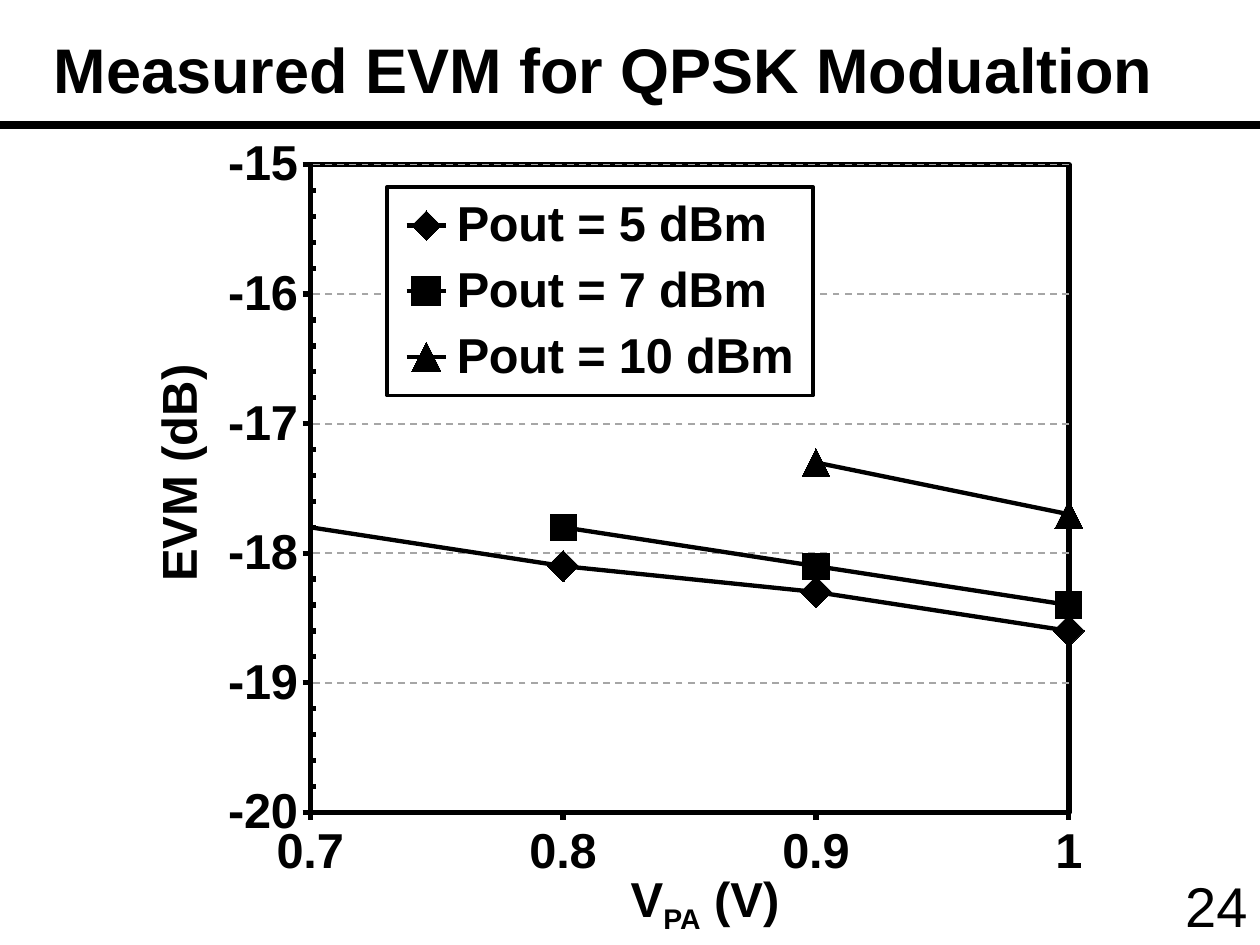
from lxml import etree
from pptx import Presentation
from pptx.chart.data import XyChartData
from pptx.dml.color import RGBColor
from pptx.enum.chart import XL_CHART_TYPE, XL_LEGEND_POSITION, XL_MARKER_STYLE, XL_TICK_MARK
from pptx.enum.dml import MSO_LINE
from pptx.enum.shapes import MSO_CONNECTOR
from pptx.enum.text import MSO_ANCHOR, PP_ALIGN
from pptx.oxml import parse_xml
from pptx.oxml.ns import nsdecls, qn
from pptx.util import Inches, Pt

LEFT, CENTER, RIGHT = PP_ALIGN.LEFT, PP_ALIGN.CENTER, PP_ALIGN.RIGHT
TOP, MIDDLE, BOTTOM = MSO_ANCHOR.TOP, MSO_ANCHOR.MIDDLE, MSO_ANCHOR.BOTTOM
DIAMOND, SQUARE, TRIANGLE = XL_MARKER_STYLE.DIAMOND, XL_MARKER_STYLE.SQUARE, XL_MARKER_STYLE.TRIANGLE
THEME = {
    "font": "Arial",
    "black": RGBColor(0, 0, 0),
    "grid": RGBColor(0xA6, 0xA6, 0xA6),
    "title": Pt(36),
    "label": Pt(28),
    "number": Pt(32),
}


def add_text(box, runs, size, bold=True, align=CENTER, anchor=TOP, wrap=True):
    sp = slide.shapes.add_textbox(*map(Inches, box))
    tf = sp.text_frame
    tf.word_wrap = wrap
    tf.vertical_anchor = anchor
    p = tf.paragraphs[0]
    p.alignment = align
    for text in runs:
        r = p.add_run()
        r.text = text
        r.font.name, r.font.size, r.font.bold = THEME["font"], size, bold
        r.font.color.rgb = THEME["black"]
    return sp


def layout_and_frame(x, y, w, h, width, fill, inner=False):
    """Return the manual layout and the framed spPr of a chart part."""
    target = '<c:layoutTarget val="inner"/>' if inner else ""
    layout = parse_xml(
        f'<c:layout {nsdecls("c")}><c:manualLayout>{target}'
        '<c:xMode val="edge"/><c:yMode val="edge"/>'
        f'<c:x val="{x}"/><c:y val="{y}"/><c:w val="{w}"/><c:h val="{h}"/>'
        '</c:manualLayout></c:layout>')
    frame = parse_xml(
        f'<c:spPr {nsdecls("c", "a")}>{fill}<a:ln w="{Pt(width)}"><a:solidFill>'
        f'<a:srgbClr val="{THEME["black"]}"/></a:solidFill></a:ln></c:spPr>')
    return layout, frame


prs = Presentation()
prs.slide_width, prs.slide_height = Inches(10), Inches(7.5)
slide = prs.slides.add_slide(prs.slide_layouts[6])

# Page number, title and rule
add_text((9.26, 6.87, 0.74, 0.63), ["24"], THEME["number"], False, RIGHT, MIDDLE, False)
title = add_text((0.33, 0.19, 9.01, 0.72), ["Measured EVM for QPSK Modualtion"],
                 THEME["title"], align=LEFT, anchor=BOTTOM, wrap=False)
title.text_frame.margin_bottom = Inches(0.07)
rule = slide.shapes.add_connector(MSO_CONNECTOR.STRAIGHT, 0, Inches(0.99), Inches(10), Inches(0.99))
rule.line.color.rgb = THEME["black"]
rule.line.width = Pt(4.5)
etree.SubElement(rule.element.spPr, qn("a:effectLst"))

# EVM chart
voltages = [0.7, 0.8, 0.9, 1]
curves = [
    ("Pout = 5 dBm", [-17.8, -18.1, -18.3, -18.6], DIAMOND, 18),
    ("Pout = 7 dBm", [-17.8, -18.1, -18.4], SQUARE, 15),
    ("Pout = 10 dBm", [-17.3, -17.7], TRIANGLE, 16),
]
data = XyChartData()
for name, values, *_ in curves:
    series = data.add_series(name)
    for point in zip(voltages[-len(values):], values):
        series.add_data_point(*point)
chart = slide.shapes.add_chart(XL_CHART_TYPE.XY_SCATTER_SMOOTH, Inches(1.81), Inches(1.07),
                               Inches(6.81), Inches(5.91), data).chart
chart.has_title = False
chart.font.name, chart.font.size, chart.font.bold = THEME["font"], THEME["label"], True
chart.font.color.rgb = THEME["black"]
plot = chart.plots[0]
plot.vary_by_categories = False

for series, (_, _, style, size) in zip(plot.series, curves):
    series.smooth = True
    series.marker.style, series.marker.size = style, size
    series.marker.format.fill.solid()
    series.marker.format.fill.fore_color.rgb = THEME["black"]
    series.marker.format.line.color.rgb = THEME["black"]
    series.format.line.color.rgb = THEME["black"]
    series.format.line.width = Pt(2.5)

# The point on the left axis has no marker
start = plot.series[0].points[0]
start.marker.style = XL_MARKER_STYLE.NONE
start.format.line.color.rgb = THEME["black"]
start.format.line.width = Pt(2.5)

x_axis, y_axis = chart.category_axis, chart.value_axis
for axis, low, high, step in ((x_axis, 0.7, 1, 0.1), (y_axis, -20, -15, 1)):
    axis.minimum_scale, axis.maximum_scale, axis.major_unit = low, high, step
    axis.has_title = False
    axis.major_tick_mark = XL_TICK_MARK.OUTSIDE
    axis.minor_tick_mark = XL_TICK_MARK.NONE
    axis.tick_labels.number_format = "General"
    axis.tick_labels.number_format_is_linked = False
    axis.tick_labels.font.size, axis.tick_labels.font.bold = THEME["label"], True
    axis.format.line.color.rgb = THEME["black"]
    axis.format.line.width = Pt(3)
x_axis.has_major_gridlines = False
x_axis.crosses_at, y_axis.crosses_at = 0.7, -20
y_axis.minor_unit = 0.2
y_axis.minor_tick_mark = XL_TICK_MARK.INSIDE
y_axis.has_major_gridlines = True
grid = y_axis.major_gridlines.format.line
grid.color.rgb, grid.width, grid.dash_style = THEME["grid"], Pt(1), MSO_LINE.DASH

area = chart.element.find(".//" + qn("c:plotArea"))
for old in area.findall(qn("c:layout")):
    area.remove(old)
layout, frame = layout_and_frame(0.09, 0.04, 0.89, 0.87, 3, "<a:noFill/>", inner=True)
area.insert(0, layout)
area.append(frame)

chart.has_legend = True
legend = chart.legend
legend.position = XL_LEGEND_POSITION.RIGHT
legend.include_in_layout = False
legend.font.name, legend.font.size, legend.font.bold = THEME["font"], THEME["label"], True
white = '<a:solidFill><a:srgbClr val="FFFFFF"/></a:solidFill>'
layout, frame = layout_and_frame(0.18, 0.07, 0.5, 0.28, 2, white)
overlay = chart.element.find(".//" + qn("c:legend")).find(qn("c:overlay"))
for old in overlay.getparent().findall(qn("c:layout")):
    overlay.getparent().remove(old)
overlay.addprevious(layout)
overlay.addnext(frame)

# Axis titles
x_title = add_text((4.8, 6.84, 1.59, 0.57), ["V", "PA", " (V)"], THEME["label"])
x_title.text_frame.paragraphs[0].runs[1].font._element.set("baseline", "-25000")
y_title = add_text((0.42, 3.47, 1.98, 0.57), ["EVM (dB)"], THEME["label"])
y_title.rotation = 270

prs.save("out.pptx")
